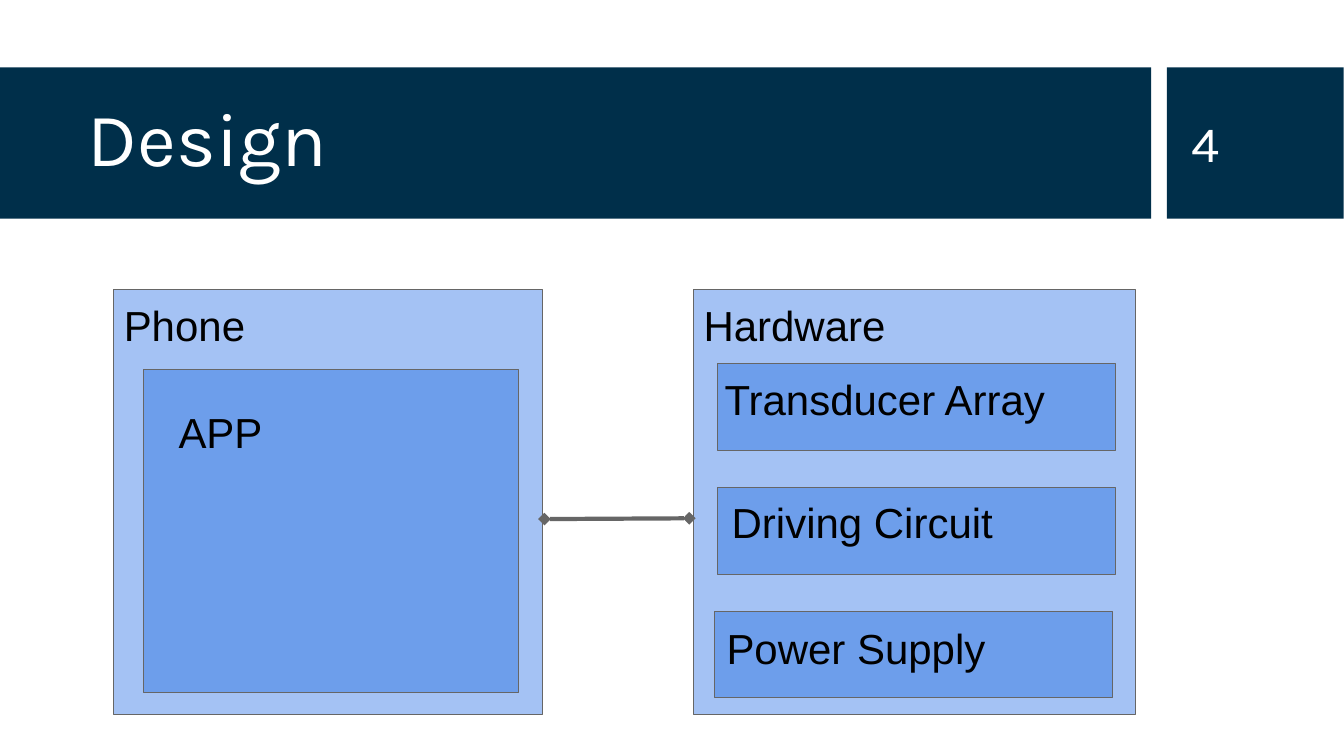
import pptx
import pptx.util
import pptx.dml.color
import pptx.enum.shapes
import pptx.enum.text
import pptx.oxml
import pptx.oxml.ns

Cm = pptx.util.Cm
Pt = pptx.util.Pt
RGBColor = pptx.dml.color.RGBColor

NAVY = RGBColor(0x00, 0x2F, 0x4A)
WHITE = RGBColor(0xFF, 0xFF, 0xFF)
BLACK = RGBColor(0x00, 0x00, 0x00)
GRAY = RGBColor(0x66, 0x66, 0x66)
LIGHT_BLUE = RGBColor(0xA4, 0xC2, 0xF4)
BLUE = RGBColor(0x6D, 0x9E, 0xEB)

TITLE_ONLY = 5
BAND_TOP, BAND_HEIGHT = 1.7, 3.81
PANEL_TOP, PANEL_HEIGHT = 7.29, 10.72
MODULE_TOP, MODULE_PITCH = 9.17, 3.12
# Label, left edge, text inset from the left, text inset from the top
MODULES = [
    ("Transducer Array", 18.08, 0.18, 0.25),
    ("Driving Circuit", 18.08, 0.36, 0.23),
    ("Power Supply", 18.01, 0.3, 0.28),
]


def write(shape, text, font_name, size, color, anchor, inset_left, inset_top):
    frame = shape.text_frame
    frame.text = text
    frame.word_wrap = True
    frame.auto_size = pptx.enum.text.MSO_AUTO_SIZE.NONE
    frame.vertical_anchor = anchor
    frame.margin_left = frame.margin_right = Cm(inset_left)
    frame.margin_top = frame.margin_bottom = Cm(inset_top)
    paragraph = frame.paragraphs[0]
    paragraph.alignment = pptx.enum.text.PP_ALIGN.LEFT
    font = paragraph.runs[0].font
    font.name = font_name
    font.size = Pt(size)
    font.color.rgb = color


def add_rectangle(slide, left, top, width, height, color):
    shape = slide.shapes.add_shape(
        pptx.enum.shapes.MSO_SHAPE.RECTANGLE,
        Cm(left), Cm(top), Cm(width), Cm(height))
    shape.shadow.inherit = False
    shape.fill.solid()
    shape.fill.fore_color.rgb = color
    shape.line.fill.background()
    return shape


def add_block(slide, label, left, top, width, height, color,
              inset_left=0.25, inset_top=0.25):
    """Add an outlined diagram block with its label at the top left."""
    block = add_rectangle(slide, left, top, width, height, color)
    block.line.color.rgb = GRAY
    block.line.width = Pt(0.75)
    write(block, label, "Arial", 30, BLACK,
          pptx.enum.text.MSO_ANCHOR.TOP, inset_left, inset_top)


def add_header(slide, title_text, number):
    add_rectangle(slide, 0, BAND_TOP, 29.01, BAND_HEIGHT, NAVY)
    add_rectangle(slide, 29.41, BAND_TOP, 4.45, BAND_HEIGHT, NAVY)

    title = slide.shapes.title
    title.left, title.top = Cm(1.88), Cm(2.08)
    title.width, title.height = Cm(26.7), Cm(3)
    middle = pptx.enum.text.MSO_ANCHOR.MIDDLE
    write(title, title_text, "Karla", 54, WHITE, middle, 0.33, 0.33)
    title.text_frame.paragraphs[0].line_spacing = 0.9
    # Bring the title in front of its band
    title.element.getparent().append(title.element)

    number_box = slide.shapes.add_textbox(Cm(29.79), Cm(2.08), Cm(3.2), Cm(3.02))
    write(number_box, number, "Karla", 36, WHITE, middle, 0.25, 0.13)


def add_link(slide, start_x, start_y, end_x, end_y):
    """Add a connector with a diamond at each end."""
    link = slide.shapes.add_connector(
        pptx.enum.shapes.MSO_CONNECTOR.STRAIGHT,
        Cm(start_x), Cm(start_y), Cm(end_x), Cm(end_y))
    link.line.color.rgb = GRAY
    link.line.width = Pt(3)
    namespace = pptx.oxml.ns.nsdecls("a")
    line = link.line._get_or_add_ln()
    for end in ("headEnd", "tailEnd"):
        line.append(pptx.oxml.parse_xml(f'<a:{end} {namespace} type="diamond"/>'))
    link.element.spPr.append(pptx.oxml.parse_xml(f"<a:effectLst {namespace}/>"))


def main():
    presentation = pptx.Presentation()
    presentation.slide_width = Cm(33.87)
    presentation.slide_height = Cm(19.05)
    slide = presentation.slides.add_slide(presentation.slide_layouts[TITLE_ONLY])

    add_header(slide, "Design", "4")

    add_block(slide, "Phone", 2.87, PANEL_TOP, 10.8, PANEL_HEIGHT, LIGHT_BLUE)
    add_block(slide, "APP", 3.61, 9.3, 9.47, 8.15, BLUE, 0.89, 0.94)

    add_block(slide, "Hardware", 17.48, PANEL_TOP, 11.13, PANEL_HEIGHT, LIGHT_BLUE)
    for row, (label, left, inset_left, inset_top) in enumerate(MODULES):
        add_block(slide, label, left, MODULE_TOP + row * MODULE_PITCH,
                  10.03, 2.18, BLUE, inset_left, inset_top)

    add_link(slide, 13.72, 13.08, 17.37, 13.06)
    presentation.save("out.pptx")


if __name__ == "__main__":
    main()
